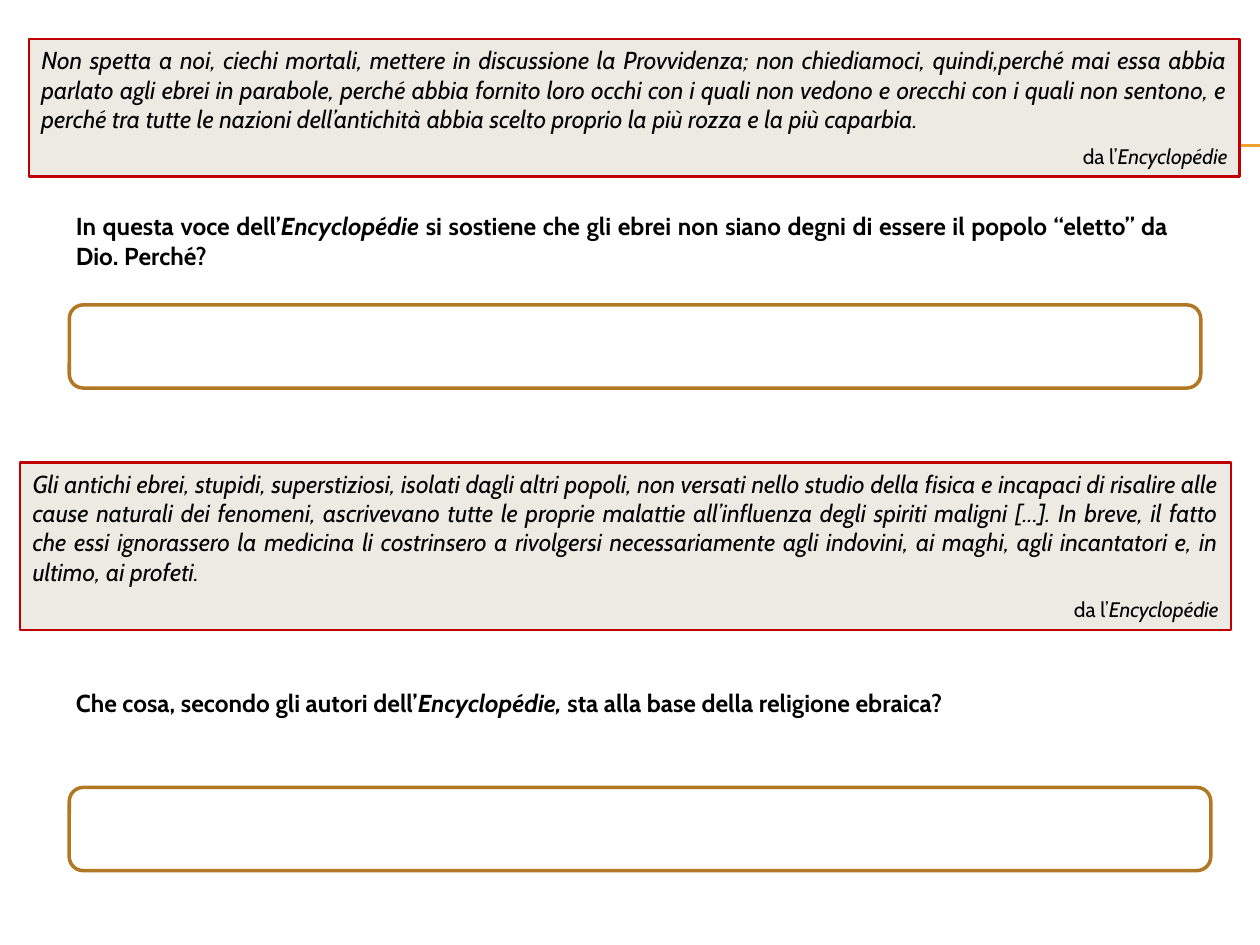
from pptx import Presentation
from pptx.dml.color import RGBColor
from pptx.enum.shapes import MSO_CONNECTOR, MSO_SHAPE
from pptx.enum.text import MSO_ANCHOR, MSO_AUTO_SIZE, PP_ALIGN
from pptx.oxml.ns import qn
from pptx.util import Inches, Pt
from lxml.etree import SubElement

FONT = "Cabin"
RULE_TOPS = (1.15, 1.16)
ROUND_CORNER = 0.167

# A paragraph is (alignment, text format, [(text, italic), ...])
QUOTE = {"size": Pt(14)}
SOURCE = {"size": Pt(12)}
QUESTION = {"size": Pt(14), "bold": True}
SOURCE_LINE = (PP_ALIGN.RIGHT, SOURCE, [("da l’", False), ("Encyclopédie", True)])

EXERCISES = [
    {
        "quote": "Non spetta a noi, ciechi mortali, mettere in discussione la Provvidenza; "
                 "non chiediamoci, quindi,perché mai essa abbia parlato agli ebrei in parabole, "
                 "perché abbia fornito loro occhi con i quali non vedono e orecchi con i quali "
                 "non sentono, e perché tra tutte le nazioni dell’antichità abbia scelto proprio "
                 "la più rozza e la più caparbia.",
        "question": [
            ("In questa voce dell’", False),
            ("Encyclopédie ", True),
            ("si sostiene che gli ebrei non siano degni di essere il popolo “eletto” da Dio. "
             "Perché?", False),
        ],
        "quote_at": (0.23, 0.31, 9.61, 1.09),
        "question_at": (0.47, 1.56, 8.94, 0.7),
        "answer_at": (0.55, 2.42, 8.98, 0.66),
    },
    {
        "quote": "Gli antichi ebrei, stupidi, superstiziosi, isolati dagli altri popoli, non "
                 "versati nello studio della fisica e incapaci di risalire alle cause naturali "
                 "dei fenomeni, ascrivevano tutte le proprie malattie all’influenza degli spiriti "
                 "maligni [...]. In breve, il fatto che essi ignorassero la medicina li "
                 "costrinsero a rivolgersi necessariamente agli indovini, ai maghi, agli "
                 "incantatori e, in ultimo, ai profeti.",
        "question": [
            ("Che cosa, secondo gli autori dell’", False),
            ("Encyclopédie, ", True),
            ("sta alla base della religione ebraica?", False),
        ],
        "quote_at": (0.16, 3.67, 9.61, 1.33),
        "question_at": (0.47, 5.23, 9.06, 0.7),
        "answer_at": (0.55, 6.25, 9.06, 0.66),
    },
]


def color(value):
    return RGBColor.from_string(value)


def add_rule(slide, top):
    rule = slide.shapes.add_connector(
        MSO_CONNECTOR.STRAIGHT, Inches(0.56), Inches(top), Inches(10), Inches(top))
    rule.line.color.rgb = color("F0A22E")
    rule.line.width = Pt(0.75)
    SubElement(rule._element.spPr, qn("a:effectLst"))


def add_box(slide, kind, place, fill=None, line=None, width=0):
    box = slide.shapes.add_shape(kind, *map(Inches, place))
    box.shadow.inherit = False
    if kind == MSO_SHAPE.ROUNDED_RECTANGLE:
        box.adjustments[0] = ROUND_CORNER
    if fill:
        box.fill.solid()
        box.fill.fore_color.rgb = color(fill)
    else:
        box.fill.background()
    if line:
        box.line.color.rgb = color(line)
        box.line.width = Pt(width)
    else:
        box.line.fill.background()
    return box


def write(box, paragraphs, anchor, space_after=0):
    frame = box.text_frame
    frame.word_wrap = True
    frame.vertical_anchor = anchor
    for index, (alignment, text_format, spans) in enumerate(paragraphs):
        para = frame.add_paragraph() if index else frame.paragraphs[0]
        para.alignment = alignment
        para.space_after = Pt(space_after)
        for text, italic in spans:
            span = para.add_run()
            span.text = text
            span.font.color.rgb = color("000000")
            for name, value in {"name": FONT, "italic": italic, **text_format}.items():
                setattr(span.font, name, value)


def add_exercise(slide, exercise):
    quote = add_box(slide, MSO_SHAPE.RECTANGLE, exercise["quote_at"], "ECEAE3", "C00000", 1.5)
    quote_line = (PP_ALIGN.JUSTIFY, QUOTE, [(exercise["quote"], True)])
    write(quote, [quote_line, SOURCE_LINE], MSO_ANCHOR.TOP, space_after=6)
    quote.text_frame.auto_size = MSO_AUTO_SIZE.SHAPE_TO_FIT_TEXT

    question = add_box(slide, MSO_SHAPE.ROUNDED_RECTANGLE, exercise["question_at"])
    write(question, [(PP_ALIGN.JUSTIFY, QUESTION, exercise["question"])], MSO_ANCHOR.MIDDLE)

    add_box(slide, MSO_SHAPE.ROUNDED_RECTANGLE, exercise["answer_at"], "FFFFFF", "B17722", 2)


def main():
    deck = Presentation()
    deck.slide_width, deck.slide_height = Inches(10), Inches(7.5)
    slide = deck.slides.add_slide(deck.slide_layouts[6])
    for top in RULE_TOPS:
        add_rule(slide, top)
    for exercise in EXERCISES:
        add_exercise(slide, exercise)
    deck.save("out.pptx")


if __name__ == "__main__":
    main()
